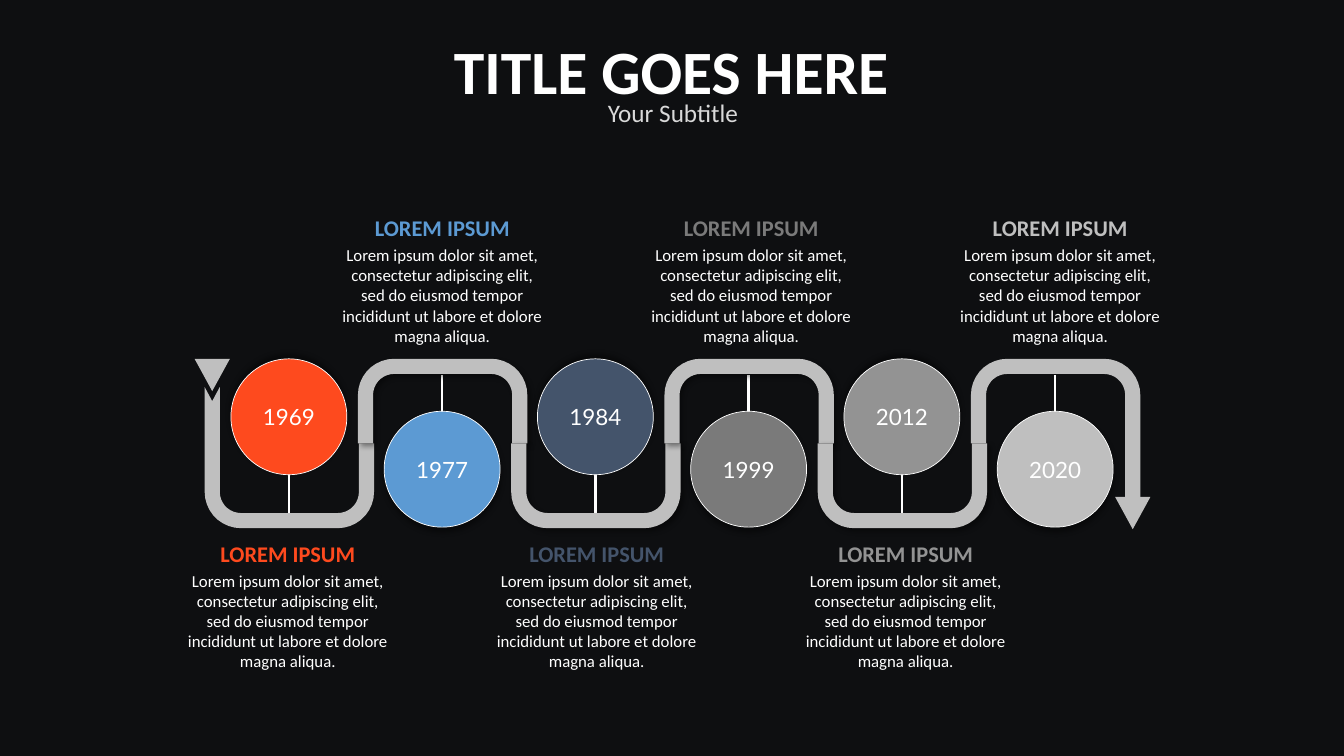
from dataclasses import dataclass
from math import cos, radians, sin

from lxml import etree
from pptx import Presentation
from pptx.dml.color import RGBColor
from pptx.enum.shapes import MSO_CONNECTOR, MSO_SHAPE
from pptx.enum.text import MSO_ANCHOR, MSO_AUTO_SIZE, PP_ALIGN
from pptx.oxml.ns import qn
from pptx.util import Inches, Pt

OVAL = MSO_SHAPE.OVAL
STRAIGHT = MSO_CONNECTOR.STRAIGHT
CENTER = PP_ALIGN.CENTER
TOP, MIDDLE = MSO_ANCHOR.TOP, MSO_ANCHOR.MIDDLE
NO_FIT = MSO_AUTO_SIZE.NONE

WHITE, TRACK, BACKGROUND = "FFFFFF", "BFBFBF", "0E0F11"
HEADING = "LOREM IPSUM"
BODY = (
    "Lorem ipsum dolor sit amet, consectetur adipiscing elit, sed do eiusmod "
    "tempor incididunt ut labore et dolore magna aliqua."
)

PITCH = 1.52
TRACK_LEFT, TRACK_TOP, TRACK_BOTTOM = 2.03, 3.56, 5.24
BEND_WIDTH, THICKNESS = 1.68, 0.15
OUTER_RADIUS, INNER_RADIUS = 0.36, 0.21
HALF_DEPTH, TAIL_DEPTH, HEAD_DEPTH, NOTCH = 0.84, 1.4, 1.45, 0.14
CIRCLE_LEFT, CIRCLE_SIZE = 2.29, 1.15
FIRST_CAPTION, LAST_CAPTION = 1.72, 9.38

Point = tuple[float, float]


@dataclass
class Milestone:
    year: str
    color: str


@dataclass
class Arrowhead:
    left: float
    top: float
    width: float = 0.35
    height: float = 0.32


MILESTONES = [
    Milestone("1969", "FE4A1E"),
    Milestone("1977", "5C9AD3"),
    Milestone("1984", "44546B"),
    Milestone("1999", "7A7A7A"),
    Milestone("2012", "939393"),
    Milestone("2020", "BFBFBF"),
]
ARROWHEADS = [Arrowhead(1.93, 3.56), Arrowhead(11.06, 4.93)]


def rgb(color: str) -> RGBColor:
    return RGBColor.from_string(color)


def write(p, text: str, *, size: float, color: str = WHITE, font: str = "Calibri",
          bold: bool = False, before: float = 0) -> None:
    p.alignment = CENTER
    if before:
        p.space_before = Pt(before)
    r = p.add_run()
    r.text = text
    r.font.name = font
    r.font.size = Pt(size)
    r.font.bold = bold
    r.font.color.rgb = rgb(color)


def add_text_box(s, left: float, top: float, width: float, height: float):
    tf = s.shapes.add_textbox(
        Inches(left), Inches(top), Inches(width), Inches(height)).text_frame
    tf.word_wrap = True
    return tf


def add_shadow(sp, direction: int) -> None:
    effects = sp._element.spPr.find(qn("a:effectLst"))
    shadow = etree.SubElement(
        effects, qn("a:outerShdw"), blurRad=str(Pt(4)), dist=str(Pt(3)),
        dir=str(direction * 60000), algn="ctr", rotWithShape="0")
    black = etree.SubElement(shadow, qn("a:srgbClr"), val="000000")
    etree.SubElement(black, qn("a:alpha"), val="40000")


def add_polygon(s, points: list[Point]):
    corners = [(Inches(x), Inches(y)) for x, y in points]
    builder = s.shapes.build_freeform(*corners[0])
    builder.add_line_segments(corners[1:])
    sp = builder.convert_to_shape()
    sp.fill.solid()
    sp.fill.fore_color.rgb = rgb(TRACK)
    sp.line.fill.background()
    sp.shadow.inherit = False
    return sp


def arc(cx: float, cy: float, radius: float, start: int, step: int) -> list[Point]:
    angles = [radians(start + step * k) for k in range(10)]
    return [(cx + radius * cos(a), cy - radius * sin(a)) for a in angles]


def add_bend(s, index: int) -> None:
    last = len(MILESTONES) - 1
    left_depth = TAIL_DEPTH if index == 0 else HALF_DEPTH
    right_depth = HEAD_DEPTH if index == last else HALF_DEPTH
    inner = THICKNESS + INNER_RADIUS
    outline = [(0, left_depth)]
    outline += arc(OUTER_RADIUS, OUTER_RADIUS, OUTER_RADIUS, 180, -10)
    outline += arc(BEND_WIDTH - OUTER_RADIUS, OUTER_RADIUS, OUTER_RADIUS, 90, -10)
    outline += [(BEND_WIDTH, right_depth), (BEND_WIDTH - THICKNESS, right_depth)]
    outline += arc(BEND_WIDTH - inner, inner, INNER_RADIUS, 0, 10)
    outline += arc(inner, inner, INNER_RADIUS, 90, 10)
    outline.append((THICKNESS, left_depth))
    if index == 0:
        outline.append((THICKNESS / 2, left_depth - NOTCH))
    edge, inward = (TRACK_TOP, 1) if index % 2 else (TRACK_BOTTOM, -1)
    left = TRACK_LEFT + PITCH * index
    sp = add_polygon(s, [(left + x, edge + inward * y) for x, y in outline])
    if 0 < index < last:
        add_shadow(sp, 45)


def add_arrowhead(s, head: Arrowhead) -> None:
    add_polygon(s, [
        (head.left, head.top),
        (head.left + head.width, head.top),
        (head.left + head.width / 2, head.top + head.height),
    ])


def add_stem(s, index: int) -> None:
    x = CIRCLE_LEFT + CIRCLE_SIZE / 2 + PITCH * index
    start, end = (4.12, 3.72) if index % 2 else (4.69, 5.09)
    stem = s.shapes.add_connector(
        STRAIGHT, Inches(x), Inches(start), Inches(x), Inches(end))
    stem.line.color.rgb = rgb(WHITE)
    stem.line.width = Pt(1.8)
    etree.SubElement(stem._element.spPr, qn("a:effectLst"))


def add_circle(s, index: int, item: Milestone) -> None:
    top = 4.08 if index % 2 else TRACK_TOP
    sp = s.shapes.add_shape(
        OVAL, Inches(CIRCLE_LEFT + PITCH * index), Inches(top),
        Inches(CIRCLE_SIZE), Inches(CIRCLE_SIZE))
    sp.fill.solid()
    sp.fill.fore_color.rgb = rgb(item.color)
    sp.line.color.rgb = rgb(WHITE)
    sp.line.width = Pt(0.5)
    sp.shadow.inherit = False
    add_shadow(sp, 90 if index % 2 else 270)
    tf = sp.text_frame
    tf.vertical_anchor = MIDDLE
    write(tf.paragraphs[0], item.year, size=16, font="Lato")


def add_caption(s, index: int, item: Milestone) -> None:
    gap = (LAST_CAPTION - FIRST_CAPTION) / (len(MILESTONES) - 1)
    top = 2.08 if index % 2 else 5.31
    tf = add_text_box(s, FIRST_CAPTION + gap * index, top, 2.27, 1.42)
    write(tf.paragraphs[0], HEADING, size=16, color=item.color, bold=True)
    write(tf.add_paragraph(), BODY, size=12, before=2.4)


def add_titles(s) -> None:
    title = s.shapes.title
    title.left, title.top = Inches(3.65), Inches(0.28)
    title.width, title.height = Inches(6.02), Inches(0.84)
    tf = title.text_frame
    tf.auto_size = NO_FIT
    tf.vertical_anchor = TOP
    write(tf.paragraphs[0], "TITLE GOES HERE", size=44, bold=True)
    tf = add_text_box(s, 4.41, 0.92, 4.53, 0.4)
    write(tf.paragraphs[0], "Your Subtitle", size=18, color="D9D9D9")


def main() -> None:
    prs = Presentation()
    prs.slide_width, prs.slide_height = Inches(13.33), Inches(7.5)
    s = prs.slides.add_slide(prs.slide_layouts[5])
    s.background.fill.solid()
    s.background.fill.fore_color.rgb = rgb(BACKGROUND)
    add_titles(s)
    for index, item in enumerate(MILESTONES):
        add_stem(s, index)
        add_circle(s, index, item)
        add_caption(s, index, item)
    for index in range(len(MILESTONES)):
        add_bend(s, index)
    for head in ARROWHEADS:
        add_arrowhead(s, head)
    prs.save("out.pptx")


if __name__ == "__main__":
    main()
